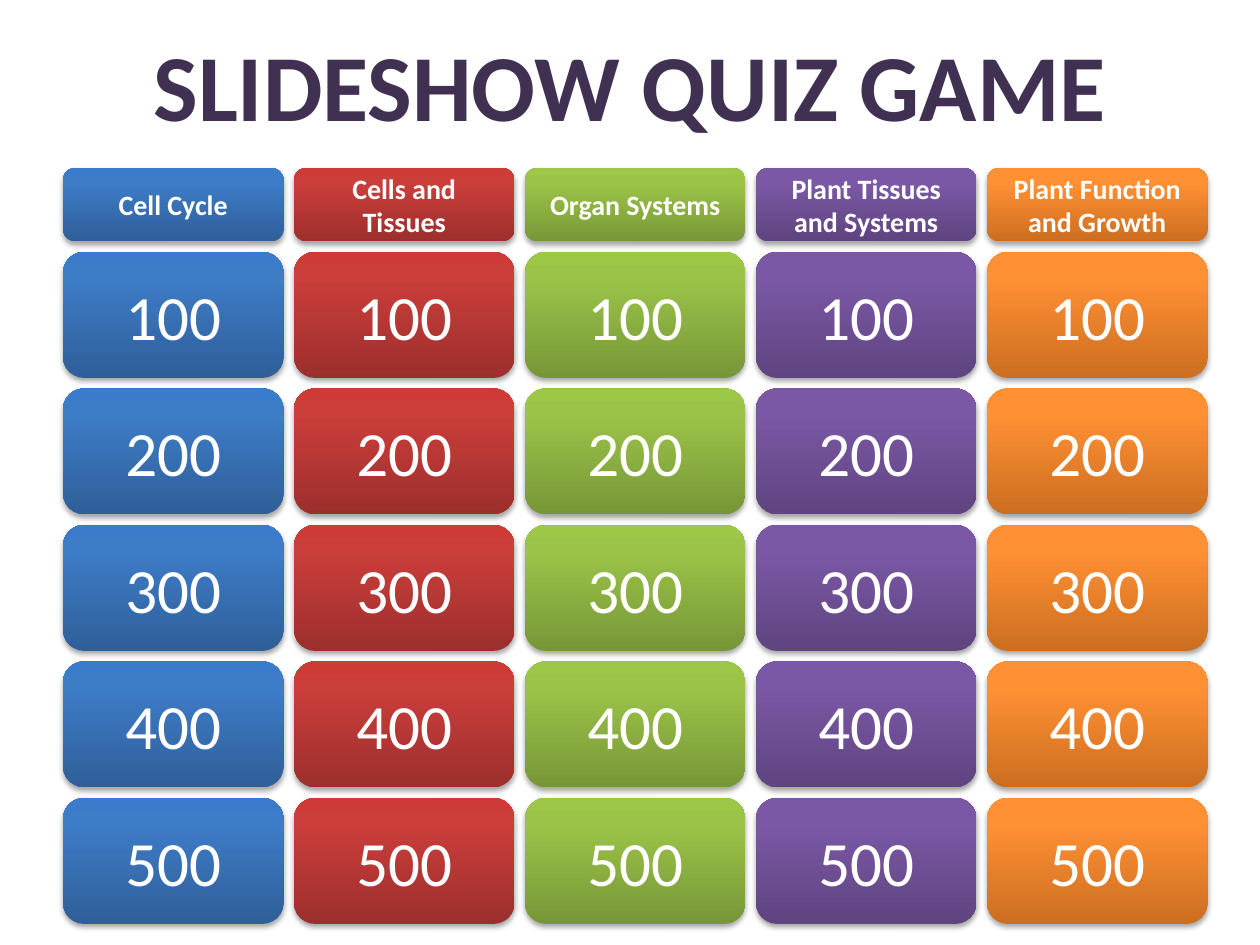
from copy import deepcopy

from lxml import etree
from pptx import Presentation
from pptx.dml.color import RGBColor
from pptx.enum.shapes import MSO_SHAPE
from pptx.enum.text import MSO_ANCHOR, PP_ALIGN
from pptx.oxml import parse_xml
from pptx.oxml.ns import nsdecls, qn
from pptx.util import Pt

PX = 9525
ROUNDED = MSO_SHAPE.ROUNDED_RECTANGLE
MIDDLE = MSO_ANCHOR.MIDDLE
CENTER = PP_ALIGN.CENTER

LEFT, HEADER_TOP, GRID_TOP = 48, 128, 192
TILE_WIDTH, HEADER_HEIGHT, TILE_HEIGHT = 168, 56, 96
GAP = 8
STOP_POSITIONS = (0, 0.8, 1)
SHADOW = (
    f'<a:outerShdw {nsdecls("a")} blurRad="40000" dist="23000" dir="5400000" rotWithShape="0">'
    '<a:srgbClr val="000000"><a:alpha val="35000"/></a:srgbClr></a:outerShdw>'
)

CATEGORIES = [
    ("Cell Cycle", ("2F5F99", "3D7CC7", "3A7CCB")),
    ("Cells and Tissues", ("9C2F2D", "CB3E3A", "CE3B37")),
    ("Organ Systems", ("779737", "9BC348", "9DC746")),
    ("Plant Tissues and Systems", ("5F4480", "7B58A6", "7C57A8")),
    ("Plant Function and Growth", ("CC6E20", "FF9034", "FF9136")),
]
POINTS = (100, 200, 300, 400, 500)


def write_text(shape, text, size, color="FFFFFF", bold=False):
    frame = shape.text_frame
    frame.word_wrap = True
    frame.vertical_anchor = MIDDLE
    para = frame.paragraphs[0]
    para.alignment = CENTER
    span = para.add_run()
    span.text = text
    span.font.name = "Calibri"
    span.font.size = Pt(size)
    span.font.bold = bold
    span.font.color.rgb = RGBColor.from_string(color)


def add_tile(left, top, height, colors):
    tile = page.shapes.add_shape(ROUNDED, left * PX, top * PX, TILE_WIDTH * PX, height * PX)
    tile.line.fill.background()
    tile.fill.gradient()
    tile.fill.gradient_angle = 90
    properties = tile._element.spPr
    stop_list = properties.find(qn("a:gradFill")).find(qn("a:gsLst"))
    stop_list.append(deepcopy(stop_list[0]))
    for stop, position, color in zip(tile.fill.gradient_stops, STOP_POSITIONS, colors):
        stop.position = position
        stop.color.rgb = RGBColor.from_string(color)
    tile.shadow.inherit = False
    etree.SubElement
    properties.find(qn("a:effectLst")).append(parse_xml(SHADOW))
    return tile


deck = Presentation()
deck.slide_width = 960 * PX
deck.slide_height = 720 * PX
page = deck.slides.add_slide(deck.slide_layouts[5])

title = page.shapes.title
title.left, title.top, title.width, title.height = LEFT * PX, 0, 864 * PX, 128 * PX
write_text(title, "SLIDESHOW QUIZ GAME", size=54, color="403152", bold=True)

for column, (category, colors) in enumerate(CATEGORIES):
    left = LEFT + column * (TILE_WIDTH + GAP)
    header = add_tile(left, HEADER_TOP, HEADER_HEIGHT, colors)
    write_text(header, category, size=16, bold=True)
    for row, points in enumerate(POINTS):
        top = GRID_TOP + row * (TILE_HEIGHT + GAP)
        tile = add_tile(left, top, TILE_HEIGHT, colors)
        write_text(tile, str(points), size=36)

deck.save("out.pptx")
